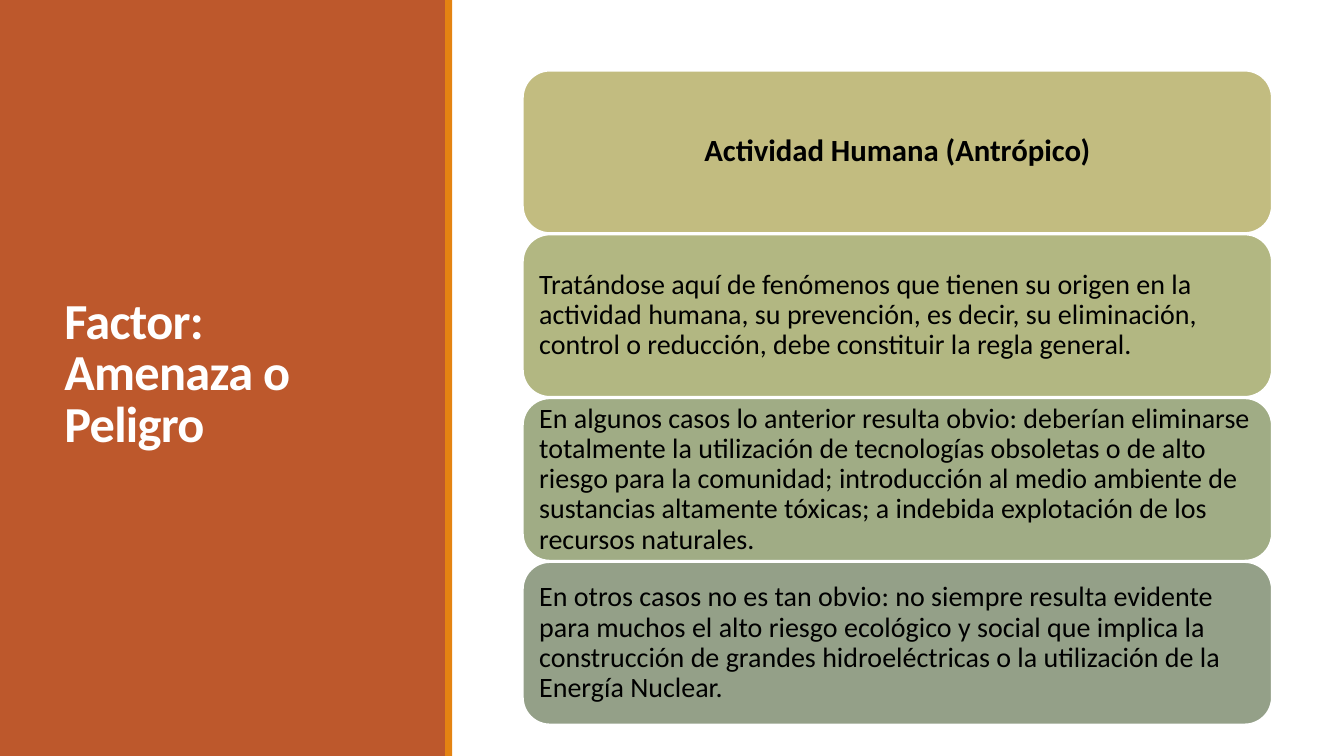
import pptx
import pptx.util
from pptx.dml.color import RGBColor
from pptx.enum.shapes import MSO_SHAPE
from pptx.enum.text import MSO_ANCHOR, PP_ALIGN

COLORS = {
    "rust": "BD582C",
    "orange": "E48312",
    "white": "FFFFFF",
    "black": "000000",
    "khaki": "C2BC80",
    "olive": "B2B782",
    "sage": "A0AC85",
    "moss": "94A088",
}
TITLE = "Factor: Amenaza o Peligro"
CARDS = [
    ("khaki", "Actividad Humana (Antrópico)",
     {"size": 22, "bold": True, "align": PP_ALIGN.CENTER}),
    ("olive", "Tratándose aquí de fenómenos que tienen su origen en la actividad humana, "
     "su prevención, es decir, su eliminación, control o reducción, debe constituir "
     "la regla general.", {}),
    ("sage", "En algunos casos lo anterior resulta obvio: deberían eliminarse totalmente "
     "la utilización de tecnologías obsoletas o de alto riesgo para la comunidad; "
     "introducción al medio ambiente de sustancias altamente tóxicas; a indebida "
     "explotación de los recursos naturales.", {}),
    ("moss", "En otros casos no es tan obvio: no siempre resulta evidente para muchos el "
     "alto riesgo ecológico y social que implica la construcción de grandes "
     "hidroeléctricas o la utilización de la Energía Nuclear.", {}),
]

PX = 6350  # EMU per px, 144 px to the inch
SLIDE_WIDTH, SLIDE_HEIGHT = 1920, 1080
PANEL_WIDTH, STRIPE_LEFT, STRIPE_WIDTH = 638, 636, 10
CARD_LEFT, CARD_TOP, CARD_WIDTH, CARD_HEIGHT, CARD_GAP = 747, 101, 1070, 232, 2


def box(*lengths):
    return [length * PX for length in lengths]


def color(name):
    return RGBColor.from_string(COLORS[name])


def add_block(slide, kind, place, fill, line=None):
    shape = slide.shapes.add_shape(kind, *box(*place))
    shape.shadow.inherit = False
    shape.fill.solid()
    shape.fill.fore_color.rgb = color(fill)
    if line:
        shape.line.color.rgb = color(line)
        shape.line.width = pptx.util.Pt(1.25)
    else:
        shape.line.fill.background()
    return shape


def write(shape, text, size=20, bold=False, ink="black", align=PP_ALIGN.LEFT,
          line_spacing=0.9, inset=12, tracking=None):
    """Fill a shape with one paragraph; tracking is in hundredths of a point."""
    frame = shape.text_frame
    frame.word_wrap = True
    frame.vertical_anchor = MSO_ANCHOR.MIDDLE
    frame.margin_left = frame.margin_right = inset * PX
    frame.margin_top = frame.margin_bottom = inset * PX
    paragraph = frame.paragraphs[0]
    paragraph.alignment = align
    paragraph.line_spacing = line_spacing
    run = paragraph.add_run()
    run.text = text
    run.font.name = "Calibri"
    run.font.size = pptx.util.Pt(size)
    run.font.bold = bold
    run.font.color.rgb = color(ink)
    if tracking:
        run.font._element.set("spc", str(tracking))


def main():
    presentation = pptx.Presentation()
    presentation.slide_width, presentation.slide_height = box(SLIDE_WIDTH, SLIDE_HEIGHT)
    slide = presentation.slides.add_slide(presentation.slide_layouts[6])

    add_block(slide, MSO_SHAPE.RECTANGLE, (0, 0, PANEL_WIDTH, SLIDE_HEIGHT), "rust")
    title = slide.shapes.add_textbox(*box(78, 82, 485, 909))
    write(title, TITLE, size=36, bold=True, ink="white", line_spacing=0.85,
          inset=14, tracking=-50)
    add_block(slide, MSO_SHAPE.RECTANGLE,
              (STRIPE_LEFT, 0, STRIPE_WIDTH, SLIDE_HEIGHT), "orange")

    for index, (fill, text, style) in enumerate(CARDS):
        top = CARD_TOP + index * (CARD_HEIGHT + CARD_GAP)
        card = add_block(slide, MSO_SHAPE.ROUNDED_RECTANGLE,
                         (CARD_LEFT, top, CARD_WIDTH, CARD_HEIGHT), fill, line="white")
        write(card, text, **style)

    presentation.save("out.pptx")


if __name__ == "__main__":
    main()
